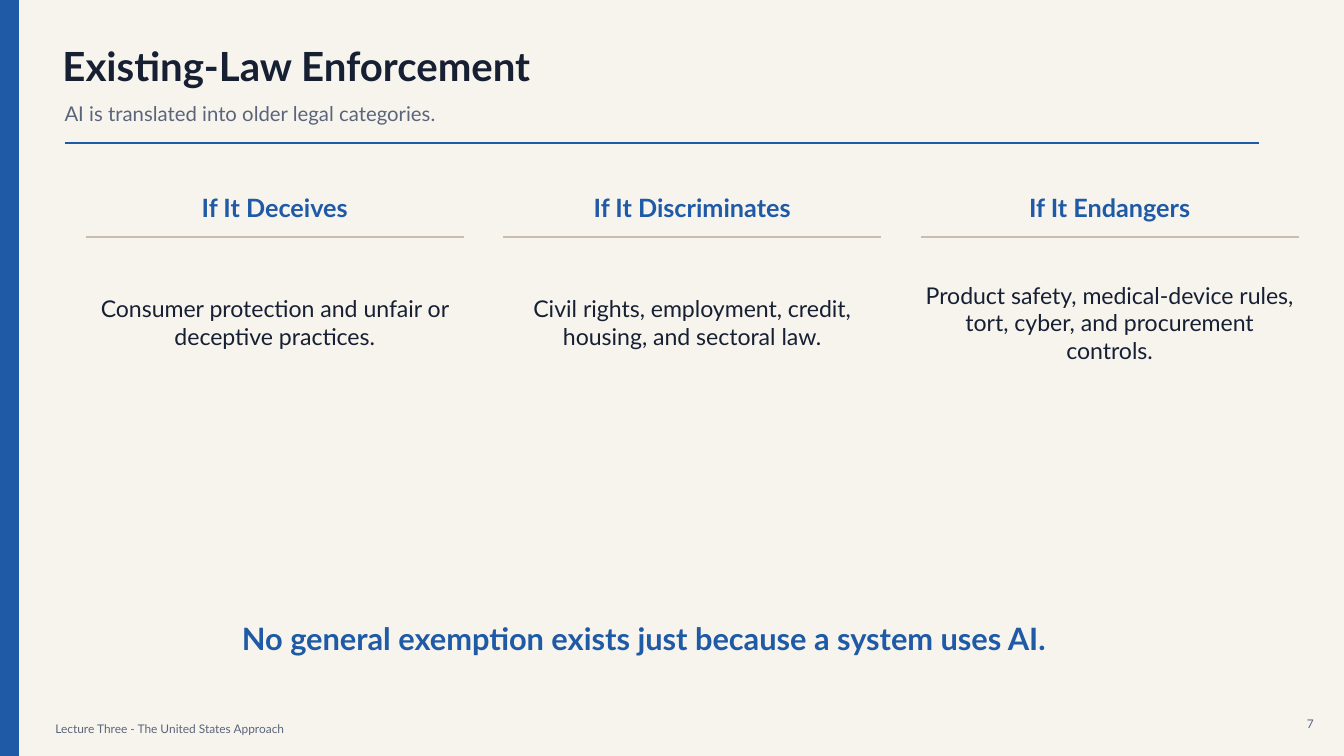
from lxml import etree
from pptx import Presentation
from pptx.dml.color import RGBColor
from pptx.enum.shapes import MSO_CONNECTOR, MSO_SHAPE
from pptx.enum.text import MSO_ANCHOR, PP_ALIGN
from pptx.oxml.ns import qn
from pptx.util import Inches, Pt

LEFT, CENTER, RIGHT = PP_ALIGN.LEFT, PP_ALIGN.CENTER, PP_ALIGN.RIGHT
MIDDLE = MSO_ANCHOR.MIDDLE
STRAIGHT, RECTANGLE = MSO_CONNECTOR.STRAIGHT, MSO_SHAPE.RECTANGLE

TITLE = "Existing-Law Enforcement"
SUBTITLE = "AI is translated into older legal categories."
CATEGORIES = [
    ("If It Deceives", "Consumer protection and unfair or deceptive practices."),
    ("If It Discriminates", "Civil rights, employment, credit, housing, and sectoral law."),
    ("If It Endangers",
     "Product safety, medical-device rules, tort, cyber, and procurement controls."),
]
TAKEAWAY = "No general exemption exists just because a system uses AI."
FOOTER = "Lecture Three - The United States Approach"
PAGE_NUMBER = "7"

COLORS = {"paper": "F7F4EE", "blue": "1F5AA6", "ink": "172033",
          "muted": "5B657A", "sand": "C9BDAE"}
FONT = "Lato"
STYLES = {
    "title": {"size": 28.7, "color": "ink", "bold": True},
    "subtitle": {"size": 14.5, "color": "muted", "bold": False},
    "heading": {"size": 18, "color": "blue", "bold": True},
    "body": {"size": 16.5, "color": "ink", "bold": False},
    "takeaway": {"size": 22, "color": "blue", "bold": True},
    "footer": {"size": 8.5, "color": "muted", "bold": False},
}
COLUMN_LEFT, COLUMN_WIDTH, COLUMN_GAP = 0.85, 3.75, 0.39


def rgb(color):
    return RGBColor.from_string(COLORS[color])


def add_text(slide, text, left, top, width, height, style, align=LEFT):
    box = slide.shapes.add_textbox(*map(Inches, (left, top, width, height)))
    frame = box.text_frame
    frame_format = {"word_wrap": True, "vertical_anchor": MIDDLE, "margin_left": 0,
                    "margin_top": 0, "margin_right": 0, "margin_bottom": 0}
    for name, value in frame_format.items():
        setattr(frame, name, value)
    paragraph = frame.paragraphs[0]
    paragraph.alignment = align
    run = paragraph.add_run()
    run.text = text
    look = STYLES[style]
    font_format = {"name": FONT, "size": Pt(look["size"]), "bold": look["bold"]}
    for name, value in font_format.items():
        setattr(run.font, name, value)
    run.font.color.rgb = rgb(look["color"])


def add_rule(slide, left, top, width, color, weight):
    """Draw a horizontal line without the theme shadow."""
    rule = slide.shapes.add_connector(
        STRAIGHT, *map(Inches, (left, top, left + width, top)))
    rule.line.color.rgb = rgb(color)
    rule.line.width = Pt(weight)
    etree.SubElement(rule._element.spPr, qn("a:effectLst"))


def add_side_band(slide, height):
    band = slide.shapes.add_shape(RECTANGLE, 0, 0, Inches(0.18), height)
    band.shadow.inherit = False
    band.fill.solid()
    band.fill.fore_color.rgb = rgb("blue")
    band.line.color.rgb = rgb("blue")
    band.line.width = Pt(1)


def main():
    deck = Presentation()
    deck.slide_width, deck.slide_height = Inches(13.33), Inches(7.5)
    slide = deck.slides.add_slide(deck.slide_layouts[6])
    slide.background.fill.solid()
    slide.background.fill.fore_color.rgb = rgb("paper")

    add_side_band(slide, deck.slide_height)
    add_text(slide, FOOTER, 0.55, 7.13, 9, 0.2, "footer")
    add_text(slide, PAGE_NUMBER, 12.75, 7.08, 0.28, 0.2, "footer", RIGHT)
    add_text(slide, TITLE, 0.62, 0.42, 9.8, 0.45, "title")
    add_text(slide, SUBTITLE, 0.64, 0.95, 10.9, 0.35, "subtitle")
    add_rule(slide, 0.64, 1.42, 11.85, "blue", 1.25)

    for index, (heading, body) in enumerate(CATEGORIES):
        left = COLUMN_LEFT + index * (COLUMN_WIDTH + COLUMN_GAP)
        add_text(slide, heading, left, 1.9, COLUMN_WIDTH, 0.32, "heading", CENTER)
        add_rule(slide, left, 2.35, COLUMN_WIDTH, "sand", 1)
        add_text(slide, body, left, 2.65, COLUMN_WIDTH, 1.1, "body", CENTER)

    add_text(slide, TAKEAWAY, 2.4, 6.08, 8.55, 0.5, "takeaway")
    deck.save("out.pptx")


if __name__ == "__main__":
    main()
